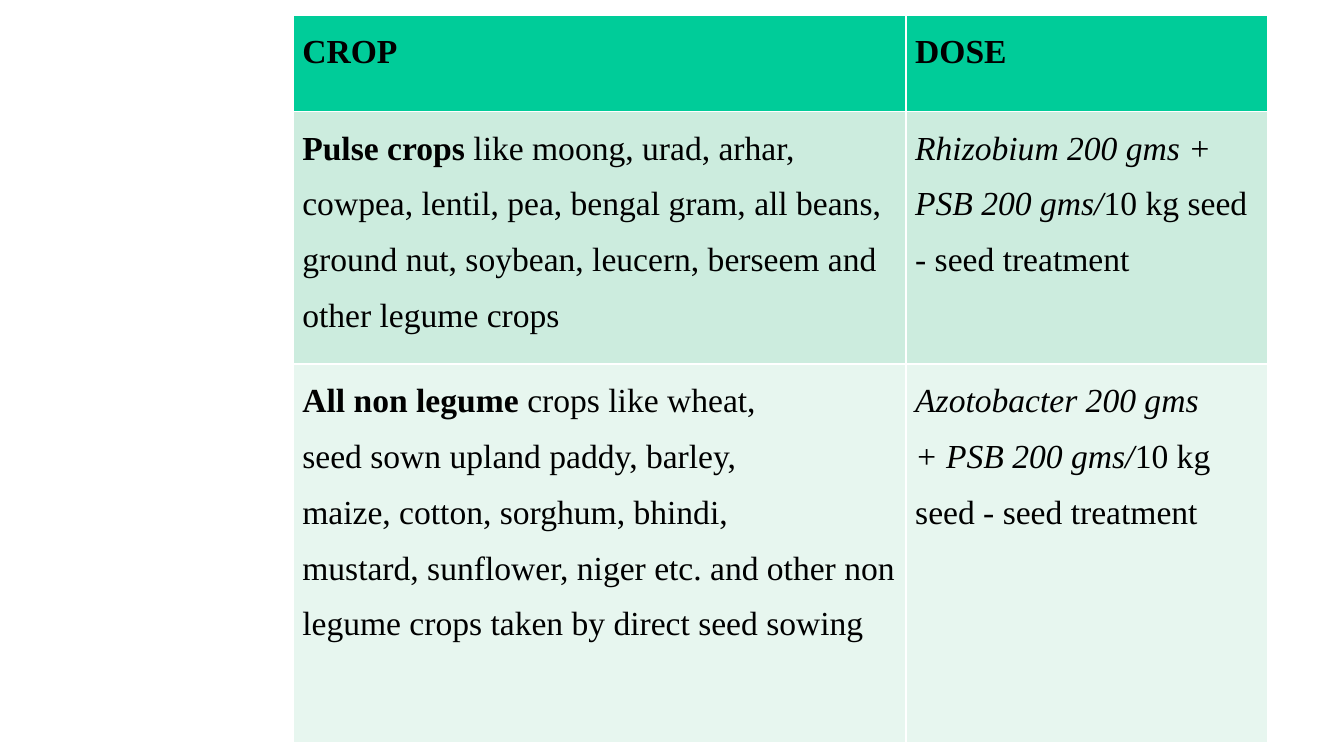
from typing import NamedTuple

from lxml.etree import SubElement
from pptx import Presentation
from pptx.dml.color import RGBColor
from pptx.oxml.ns import qn
from pptx.util import Inches, Pt

BLACK = RGBColor(0x00, 0x00, 0x00)
WHITE = RGBColor(0xFF, 0xFF, 0xFF)
GREEN = RGBColor(0x00, 0xCC, 0x99)
MINT = RGBColor(0xCC, 0xEC, 0xDE)
PALE_MINT = RGBColor(0xE7, 0xF6, 0xEF)

FONT = "Times New Roman"
COLUMN_WIDTHS = (4.56, 2.69)


class Run(NamedTuple):
    text: str
    bold: bool = False
    italic: bool = False


Paragraphs = list[list[Run]]


class Row(NamedTuple):
    height: float
    fill: RGBColor
    crop: Paragraphs
    dose: Paragraphs


ROWS = [
    Row(0.72, GREEN, [[Run("CROP", bold=True)]], [[Run("DOSE", bold=True)]]),
    Row(1.88, MINT,
        [[Run("Pulse crops ", bold=True),
          Run("like moong, urad, arhar, cowpea, lentil, pea, bengal gram, "
              "all beans, ground nut, soybean, leucern, berseem and other "
              "legume crops")]],
        [[Run("Rhizobium 200 gms +", italic=True)],
         [Run("PSB 200 gms/", italic=True),
          Run("10 kg seed - seed treatment")]]),
    Row(2.82, PALE_MINT,
        [[Run("All non legume ", bold=True), Run("crops like wheat,")],
         [Run("seed sown upland paddy, barley,")],
         [Run("maize, cotton, sorghum, bhindi,")],
         [Run("mustard, sunflower, niger etc. and other non legume crops "
              "taken by direct seed sowing")]],
        [[Run("Azotobacter 200 gms", italic=True)],
         [Run("+ PSB 200 gms/", italic=True),
          Run("10 kg seed - seed treatment")]]),
]


def add_text(tf, paragraphs: Paragraphs, *, size: float = 18,
             color: RGBColor = BLACK, line_spacing: float = 1.5) -> None:
    for i, runs in enumerate(paragraphs):
        p = tf.add_paragraph() if i else tf.paragraphs[0]
        p.line_spacing = line_spacing
        for run in runs:
            r = p.add_run()
            r.text = run.text
            r.font.name = FONT
            r.font.size = Pt(size)
            r.font.color.rgb = color
            r.font.bold = run.bold
            r.font.italic = run.italic


def set_borders(cell, width: float = 1) -> None:
    """Draw white borders; call before the cell's fill is set."""
    tc_pr = cell._tc.get_or_add_tcPr()
    for side in "LRTB":
        ln = SubElement(tc_pr, qn(f"a:ln{side}"), w=str(Pt(width)))
        fill = SubElement(ln, qn("a:solidFill"))
        SubElement(fill, qn("a:srgbClr"), val=str(WHITE))


def fill_cell(cell, paragraphs: Paragraphs, color: RGBColor) -> None:
    cell.margin_left = cell.margin_right = Inches(0.07)
    cell.margin_top = cell.margin_bottom = 0
    set_borders(cell)
    cell.fill.solid()
    cell.fill.fore_color.rgb = color
    add_text(cell.text_frame, paragraphs)


def add_dose_table(s) -> None:
    table = s.shapes.add_table(
        len(ROWS), len(COLUMN_WIDTHS), Inches(2.18), Inches(0.11),
        Inches(sum(COLUMN_WIDTHS)), Inches(sum(r.height for r in ROWS))).table
    for column, width in zip(table.columns, COLUMN_WIDTHS):
        column.width = Inches(width)
    for i, row in enumerate(ROWS):
        table.rows[i].height = Inches(row.height)
        for j, paragraphs in enumerate((row.crop, row.dose)):
            fill_cell(table.cell(i, j), paragraphs, row.fill)


def main() -> None:
    prs = Presentation()
    prs.slide_width = Inches(10)
    prs.slide_height = prs.slide_width * 9 // 16
    s = prs.slides.add_slide(prs.slide_layouts[6])
    add_dose_table(s)
    prs.save("out.pptx")


if __name__ == "__main__":
    main()
